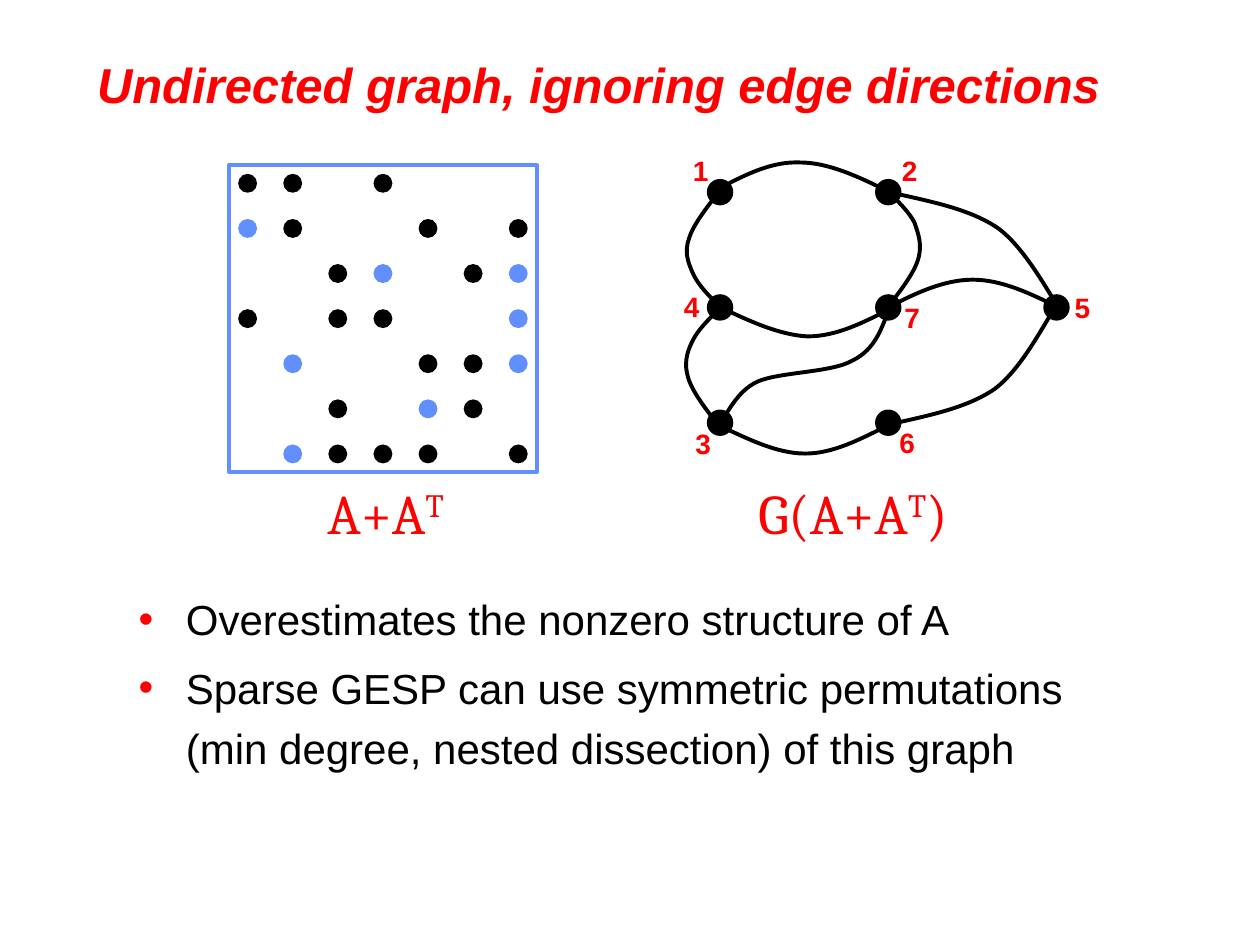
from typing import NamedTuple

from lxml.etree import SubElement
from pptx import Presentation
from pptx.dml.color import RGBColor
from pptx.enum.shapes import MSO_SHAPE as Shape
from pptx.enum.text import MSO_ANCHOR as Anchor, MSO_AUTO_SIZE as AutoSize, PP_ALIGN as Align
from pptx.oxml.ns import qn
from pptx.util import Inches, Pt

RED = RGBColor(0xFF, 0x00, 0x00)
BLUE = RGBColor(0x61, 0x8F, 0xFD)
BLACK = RGBColor(0x00, 0x00, 0x00)

SLIDE_W, SLIDE_H = Inches(10), Inches(7.5)
COLS, ROWS = 100, 75


class Box(NamedTuple):
    col: float
    row: float
    cols: float
    rows: float


class Node(NamedTuple):
    name: str
    col: int
    row: int
    label_col: float
    label_row: float


class Formula(NamedTuple):
    box: Box
    runs: tuple


class Edge(NamedTuple):
    points: tuple


TITLE = Box(6.7, 3.3, 85, 6.7)
BODY = Box(10, 45.8, 80, 20.8)
BULLETS = (
    "Overestimates the nonzero structure of A",
    "Sparse GESP can use symmetric permutations (min degree, nested dissection) of this graph",
)

FRAME = Box(18.2, 13.1, 24.4, 24.4)
DOT, DOT_PITCH, DOT_MARGIN = 1.5, 3.58, 0.7
MATRIX = (
    "xx.x...",
    "ox..x.x",
    "..xo.xo",
    "x.xx..o",
    ".o..xxo",
    "..x.ox.",
    ".oxxx.x",
)
DOT_COLOURS = {"x": BLACK, "o": BLUE}

NODE, NODE_LEFT, NODE_TOP = 2.1, 56.1, 14.2
NODE_COL, NODE_ROW = 13.35, 9.15
NODES = (
    Node("1", 0, 0, 54, 11.7),
    Node("2", 1, 0, 70.6, 11.7),
    Node("3", 0, 2, 54.2, 33.4),
    Node("4", 0, 1, 53.3, 22.5),
    Node("7", 1, 1, 70.8, 23.4),
    Node("6", 1, 2, 70.4, 33.3),
    Node("5", 2, 1, 84.3, 22.6),
)

EDGES = (
    Edge(((57, 15), (59.1, 13.9), (61.2, 12.8), (63.5, 12.9),
          (65.7, 12.9), (68.1, 14), (70.5, 15.2))),
    Edge(((70.7, 24.3), (72.8, 23.2), (75, 22.2), (77.2, 22.2),
          (79.5, 22.2), (81.8, 23.3), (84.2, 24.5))),
    Edge(((70.4, 33.8), (68.2, 34.9), (66.1, 36), (63.9, 36),
          (61.6, 36), (59.3, 34.8), (56.9, 33.7))),
    Edge(((70.7, 24.5), (68.5, 25.6), (66.4, 26.7), (64.1, 26.7),
          (61.9, 26.6), (59.5, 25.5), (57.2, 24.4))),
    Edge(((57, 24.2), (56.2, 23.4), (55.4, 22.6), (55, 21.7), (54.6, 20.8),
          (54.3, 20), (54.7, 18.9), (55, 17.9), (56, 16.6), (57, 15.3))),
    Edge(((56.9, 24.7), (56.1, 25.5), (55.3, 26.3), (54.9, 27.2), (54.5, 28),
          (54.3, 28.9), (54.6, 29.9), (54.9, 31), (55.9, 32.3), (56.9, 33.6))),
    Edge(((70.6, 15.3), (71.4, 16.1), (72.2, 16.9), (72.6, 17.7), (72.9, 18.6),
          (73.2, 19.4), (72.9, 20.5), (72.6, 21.6), (71.6, 22.9), (70.6, 24.2))),
    Edge(((57.2, 33.4), (57.7, 33), (58.4, 31.1), (60.1, 30.3), (61.9, 29.5),
          (66, 29.6), (67.7, 28.6), (69.5, 27.7), (70, 26), (70.6, 24.4))),
    Edge(((83.7, 24.5), (82.9, 25.6), (81.1, 29.3), (78.9, 30.9),
          (76.7, 32.4), (73.6, 33), (70.5, 33.7))),
    Edge(((84.1, 24.5), (83.3, 23.4), (81.4, 19.7), (79.2, 18.1),
          (77, 16.6), (73.9, 16), (70.8, 15.3))),
)

FORMULAS = (
    Formula(Box(25, 37.5, 12.7, 6.3), (("A+A", False), ("T", True))),
    Formula(Box(59.2, 37.5, 20, 6.3), (("G(A+A", False), ("T", True), (")", False))),
)


def x(cols: float) -> int:
    return round(SLIDE_W * cols / COLS)


def y(rows: float) -> int:
    return round(SLIDE_H * rows / ROWS)


def place(box: Box) -> tuple:
    return x(box.col), y(box.row), x(box.cols), y(box.rows)


def add_run(p, text: str, font: str, size: float, colour: RGBColor):
    r = p.add_run()
    r.text = text
    r.font.name, r.font.size = font, Pt(size)
    r.font.color.rgb = colour
    return r


def add_text(slide, box: Box):
    tf = slide.shapes.add_textbox(*place(box)).text_frame
    tf.word_wrap = False
    tf.auto_size = AutoSize.SHAPE_TO_FIT_TEXT
    return tf.paragraphs[0]


def add_dot(group, col: float, row: float, size: float, colour: RGBColor) -> None:
    sp = group.shapes.add_shape(Shape.OVAL, *place(Box(col, row, size, size)))
    sp.shadow.inherit = False
    sp.fill.solid()
    sp.fill.fore_color.rgb = colour
    sp.line.fill.background()


def set_outline(sp, colour: RGBColor) -> None:
    sp.shadow.inherit = False
    sp.fill.background()
    sp.line.color.rgb = colour
    sp.line.width = Pt(2.25)


def add_edge(slide, edge: Edge) -> None:
    start, *rest = [(x(col), y(row)) for col, row in edge.points]
    builder = slide.shapes.build_freeform(*start)
    builder.add_line_segments(rest, close=False)
    sp = builder.convert_to_shape()
    set_outline(sp, BLACK)
    path = next(sp._element.iter(qn("a:path")))
    segments = path.findall(qn("a:lnTo"))
    for i in range(0, len(segments), 3):
        curve = SubElement(path, qn("a:cubicBezTo"))
        for segment in segments[i:i + 3]:
            curve.append(segment[0])
            path.remove(segment)


def add_title(slide) -> None:
    sp = slide.shapes.title
    sp.left, sp.top, sp.width, sp.height = place(TITLE)
    tf = sp.text_frame
    tf.auto_size, tf.vertical_anchor = AutoSize.NONE, Anchor.MIDDLE
    p = tf.paragraphs[0]
    p.alignment = Align.LEFT
    r = add_run(p, "Undirected graph, ignoring edge directions", "Arial", 28, RED)
    r.font.bold = r.font.italic = True


def add_bullets(slide) -> None:
    sp = slide.placeholders[1]
    sp.left, sp.top, sp.width, sp.height = place(BODY)
    tf = sp.text_frame
    tf.auto_size = AutoSize.NONE
    for i, text in enumerate(BULLETS):
        p = tf.add_paragraph() if i else tf.paragraphs[0]
        p.line_spacing, p.space_before = 1.2, Pt(4.8)
        pPr = p._p.get_or_add_pPr()
        pPr.set("marL", str(x(3.75)))
        pPr.set("indent", str(-x(3.75)))
        SubElement(SubElement(pPr, qn("a:buClr")), qn("a:srgbClr"), val=str(RED))
        SubElement(pPr, qn("a:buChar"), char="•")
        add_run(p, text, "Arial", 24, BLACK)


def add_matrix(slide) -> None:
    group = slide.shapes.add_group_shape()
    set_outline(group.shapes.add_shape(Shape.RECTANGLE, *place(FRAME)), BLUE)
    for i, line in enumerate(MATRIX):
        for j, mark in enumerate(line):
            if mark in DOT_COLOURS:
                add_dot(group, FRAME.col + DOT_MARGIN + j * DOT_PITCH,
                        FRAME.row + DOT_MARGIN + i * DOT_PITCH, DOT, DOT_COLOURS[mark])


def add_graph(slide) -> None:
    group = slide.shapes.add_group_shape()
    for node in NODES:
        add_dot(group, NODE_LEFT + node.col * NODE_COL,
                NODE_TOP + node.row * NODE_ROW, NODE, BLACK)
    for edge in EDGES:
        add_edge(slide, edge)
    for node in NODES:
        p = add_text(slide, Box(node.label_col, node.label_row, 3.2, 3.7))
        add_run(p, node.name, "Arial", 16, RED).font.bold = True


def add_formula(slide, formula: Formula) -> None:
    p = add_text(slide, formula.box)
    for text, raised in formula.runs:
        r = add_run(p, text, "Cambria", 32, RED)
        if raised:
            r._r.get_or_add_rPr().set("baseline", "30000")


def main() -> None:
    prs = Presentation()
    prs.slide_width, prs.slide_height = SLIDE_W, SLIDE_H
    slide = prs.slides.add_slide(prs.slide_layouts[1])
    add_title(slide)
    add_bullets(slide)
    add_matrix(slide)
    add_graph(slide)
    for formula in FORMULAS:
        add_formula(slide, formula)
    prs.save("out.pptx")


if __name__ == "__main__":
    main()
